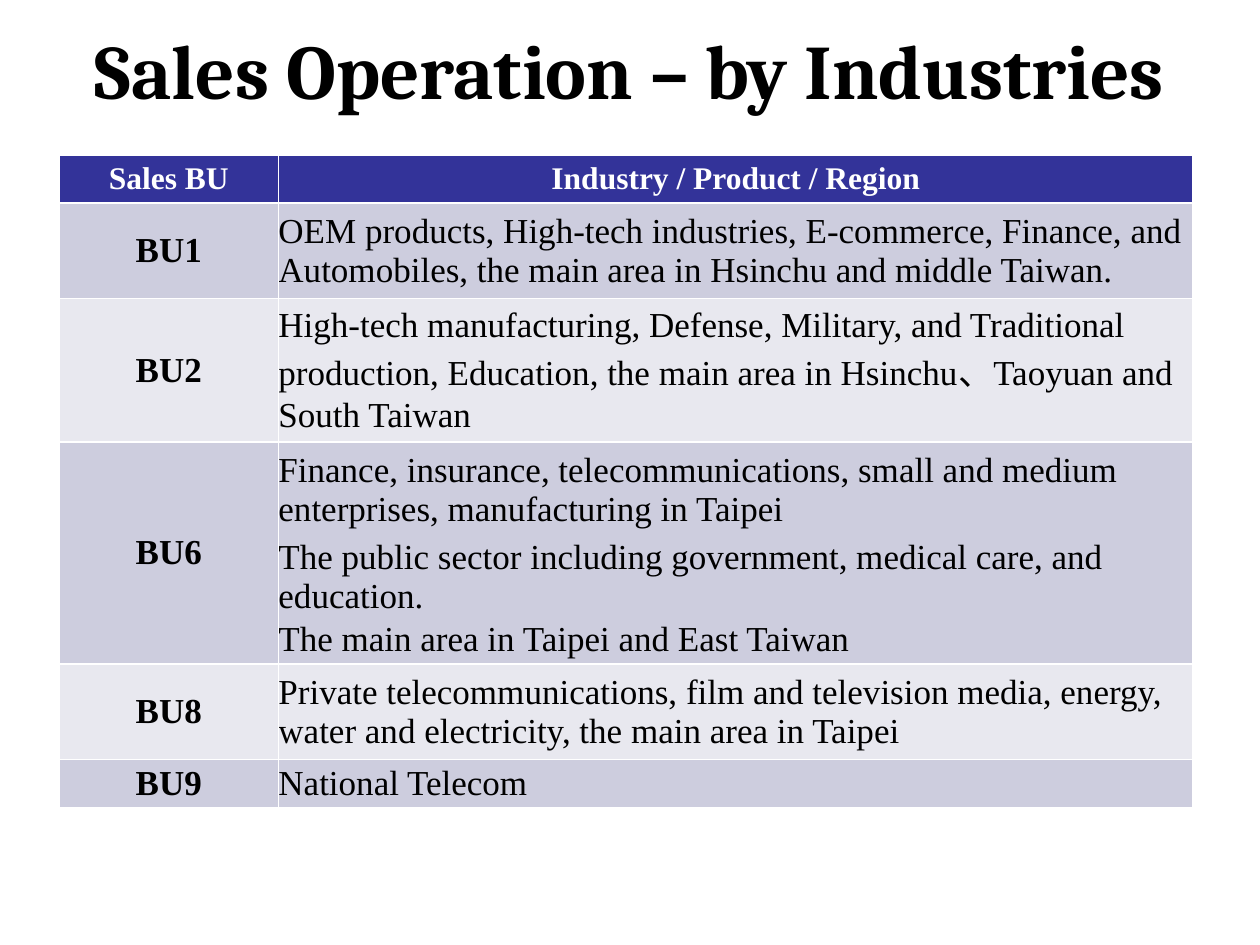
from dataclasses import dataclass

from lxml.etree import SubElement
from pptx import Presentation
from pptx.dml.color import RGBColor
from pptx.enum.text import MSO_ANCHOR as Anchor, PP_ALIGN as Align
from pptx.oxml.ns import qn
from pptx.util import Inches, Pt


@dataclass(frozen=True)
class Theme:
    title_font: str = "Cambria"
    body_font: str = "Times New Roman"
    black: str = "000000"
    white: str = "FFFFFF"
    header: str = "333399"
    bands: tuple[str, str] = ("CDCDDE", "E8E8EF")
    title_size: int = 44
    header_size: int = 18
    body_size: int = 20
    thin: float = 1
    thick: float = 1.5


@dataclass(frozen=True)
class Entry:
    text: str
    height: float


@dataclass(frozen=True)
class SalesUnit:
    name: str
    entries: tuple[Entry, ...]


THEME = Theme()
HEADINGS = ("Sales BU", "Industry / Product / Region")
COLUMN_WIDTHS = (1.74, 7.26)
LINE_HEIGHT = 0.38
UNITS = (
    SalesUnit("BU1", (
        Entry("OEM products, High-tech industries, E-commerce, Finance, and "
              "Automobiles, the main area in Hsinchu and middle Taiwan.", 2 * LINE_HEIGHT),
    )),
    SalesUnit("BU2", (
        Entry("High-tech manufacturing, Defense, Military, and Traditional production, "
              "Education, the main area in Hsinchu、Taoyuan and South Taiwan", 3 * LINE_HEIGHT),
    )),
    SalesUnit("BU6", (
        Entry("Finance, insurance, telecommunications, small and medium enterprises, "
              "manufacturing in Taipei", 2 * LINE_HEIGHT),
        Entry("The public sector including government, medical care, and education.", 0.62),
        Entry("The main area in Taipei and East Taiwan", LINE_HEIGHT),
    )),
    SalesUnit("BU8", (
        Entry("Private telecommunications, film and television media, energy, water "
              "and electricity, the main area in Taipei", 2 * LINE_HEIGHT),
    )),
    SalesUnit("BU9", (Entry("National Telecom", LINE_HEIGHT),)),
)


def add_run(paragraph, text: str, font_name: str, size: float, color: str, bold: bool) -> None:
    run = paragraph.add_run()
    run.text = text
    run.font.name = font_name
    run.font.size = Pt(size)
    run.font.bold = bold
    run.font.color.rgb = RGBColor.from_string(color)


def set_borders(cell, top: float, bottom: float) -> None:
    """Draw white cell edges; a top or bottom width of 0 hides that edge."""
    properties = cell._tc.get_or_add_tcPr()
    widths = {"a:lnL": THEME.thin, "a:lnR": THEME.thin, "a:lnT": top, "a:lnB": bottom}
    for tag, width in widths.items():
        line = SubElement(properties, qn(tag), w=str(Pt(width)))
        if width:
            fill = SubElement(line, qn("a:solidFill"))
            SubElement(fill, qn("a:srgbClr"), val=THEME.white)
        else:
            SubElement(line, qn("a:noFill"))


def format_cell(cell, fill: str, top: float, bottom: float) -> None:
    cell.margin_left = cell.margin_right = cell.margin_top = cell.margin_bottom = 0
    cell.vertical_anchor = Anchor.MIDDLE
    set_borders(cell, top, bottom)
    cell.fill.solid()
    cell.fill.fore_color.rgb = RGBColor.from_string(fill)


def write_cell(cell, text: str, size: float, color: str, bold: bool, align: Align) -> None:
    paragraph = cell.text_frame.paragraphs[0]
    paragraph.alignment = align
    add_run(paragraph, text, THEME.body_font, size, color, bold)


def add_title(slide, text: str) -> None:
    title = slide.shapes.title
    title.left, title.top = Inches(0.5), Inches(0.17)
    title.width, title.height = Inches(9), Inches(0.75)
    title.text_frame.vertical_anchor = Anchor.MIDDLE
    paragraph = title.text_frame.paragraphs[0]
    paragraph.alignment = Align.CENTER
    add_run(paragraph, text, THEME.title_font, THEME.title_size, THEME.black, True)


def add_unit(table, unit: SalesUnit, first_row: int, fill: str) -> None:
    """Fill one row per entry, with the unit name spanning them all."""
    last = len(unit.entries) - 1
    for index, entry in enumerate(unit.entries):
        row = first_row + index
        table.rows[row].height = Inches(entry.height)
        if index:
            top = 0
        else:
            top = THEME.thick if first_row == 1 else THEME.thin
        bottom = THEME.thin if index == last else 0
        for column in range(len(HEADINGS)):
            format_cell(table.cell(row, column), fill, top, bottom)
        write_cell(table.cell(row, 1), entry.text, THEME.body_size, THEME.black, False, Align.LEFT)
    name_cell = table.cell(first_row, 0)
    if last:
        name_cell.merge(table.cell(first_row + last, 0))
    write_cell(name_cell, unit.name, THEME.body_size, THEME.black, True, Align.CENTER)


def add_sales_table(slide) -> None:
    row_count = 1 + sum(len(unit.entries) for unit in UNITS)
    table = slide.shapes.add_table(
        row_count, len(HEADINGS), Inches(0.47), Inches(1.23), Inches(9), Inches(5.24)
    ).table
    table.rows[0].height = Inches(LINE_HEIGHT)
    for column, (heading, width) in enumerate(zip(HEADINGS, COLUMN_WIDTHS)):
        table.columns[column].width = Inches(width)
        cell = table.cell(0, column)
        format_cell(cell, THEME.header, THEME.thin, THEME.thick)
        write_cell(cell, heading, THEME.header_size, THEME.white, True, Align.CENTER)
    row = 1
    for index, unit in enumerate(UNITS):
        add_unit(table, unit, row, THEME.bands[index % 2])
        row += len(unit.entries)


def main() -> None:
    presentation = Presentation()
    presentation.slide_width, presentation.slide_height = Inches(10), Inches(7.5)
    slide = presentation.slides.add_slide(presentation.slide_layouts[5])
    add_title(slide, "Sales Operation – by Industries")
    add_sales_table(slide)
    presentation.save("out.pptx")


if __name__ == "__main__":
    main()
